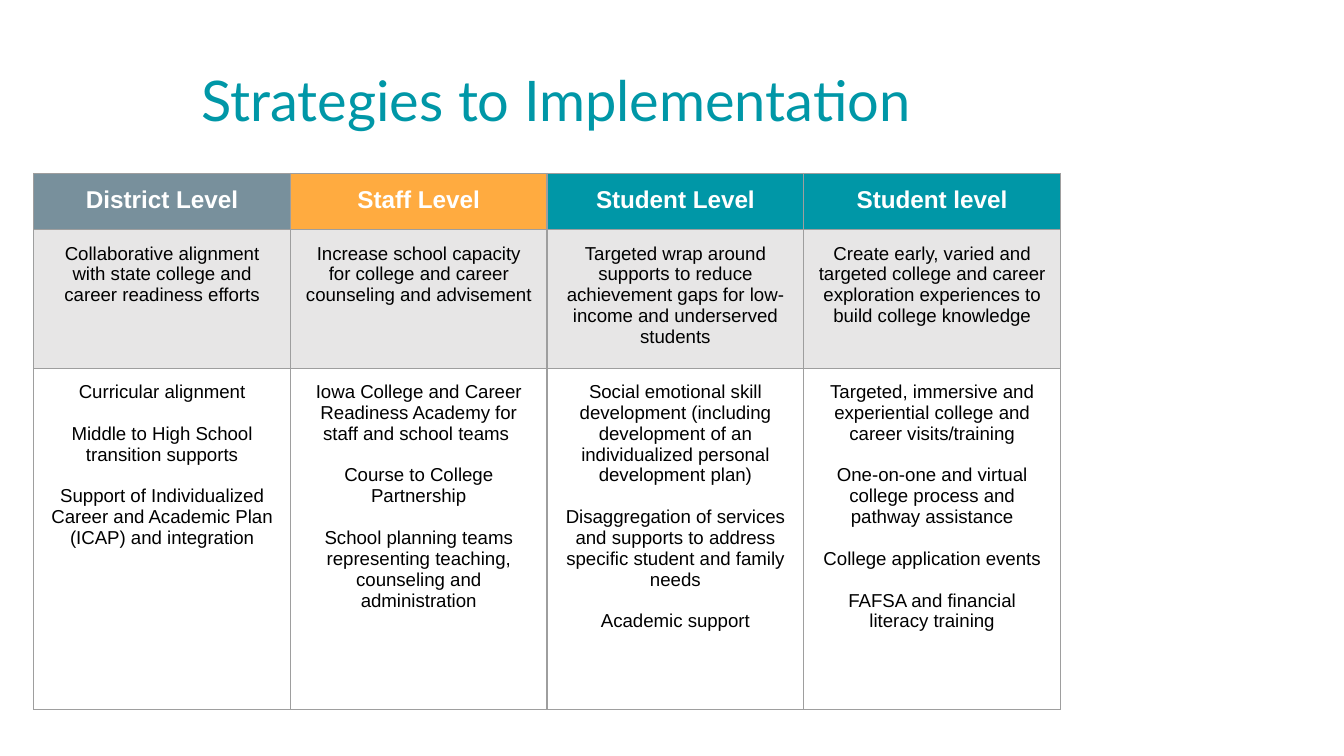
from dataclasses import dataclass
from typing import Any

from lxml import etree
from pptx import Presentation
from pptx import util as u
from pptx.dml import color as clr
from pptx.enum import text as t
from pptx.oxml import ns


@dataclass(frozen=True)
class Theme:
    teal: str = "0097A7"
    slate: str = "78909C"
    amber: str = "FFAB40"
    gray: str = "E7E6E6"
    white: str = "FFFFFF"
    black: str = "000000"
    rule: str = "9E9E9E"
    sans: str = "Arial"
    head: str = "Lato"
    title: float = 30
    label: float = 13
    body: float = 10
    gap: float = 11.2


@dataclass(frozen=True)
class Level:
    name: str
    fill: str
    goal: str
    steps: tuple[str, ...]


THEME = Theme()
WIDE = u.Inches(10)
ROWS = (0.42, 1.03, 2.54)
WIDTH = 1.91
LEVELS = (
    Level("District Level", THEME.slate,
          "Collaborative alignment with state college and career readiness efforts",
          ("Curricular alignment",
           "Middle to High School transition supports",
           "Support of Individualized Career and Academic Plan (ICAP) and integration")),
    Level("Staff Level", THEME.amber,
          "Increase school capacity for college and career counseling and advisement",
          ("Iowa College and Career Readiness Academy for staff and school teams ",
           "Course to College Partnership",
           "School planning teams representing teaching, counseling and administration")),
    Level("Student Level", THEME.teal,
          "Targeted wrap around supports to reduce achievement gaps for "
          "low-income and underserved students",
          ("Social emotional skill development (including development of an "
           "individualized personal development plan)",
           "Disaggregation of services and supports to address specific student "
           "and family needs",
           "Academic support")),
    Level("Student level", THEME.teal,
          "Create early, varied and targeted college and career exploration "
          "experiences to build college knowledge",
          ("Targeted, immersive and experiential college and career visits/training",
           "One-on-one and virtual college process and pathway assistance",
           "College application events",
           "FAFSA and financial literacy training")),
)


def apply(item: Any, form: dict[str, Any]) -> None:
    for key, value in form.items():
        setattr(item, key, value)


def write(para: Any, words: str, color: str, font: dict[str, Any]) -> None:
    run = para.add_run()
    run.text = words
    apply(run.font, font)
    run.font.color.rgb = clr.RGBColor.from_string(color)


def border(cell: Any) -> None:
    props = cell._tc.get_or_add_tcPr()
    for side in ("lnL", "lnR", "lnT", "lnB"):
        line = etree.SubElement(props, ns.qn(f"a:{side}"), w=str(u.Pt(0.75)))
        fill = etree.SubElement(line, ns.qn("a:solidFill"))
        etree.SubElement(fill, ns.qn("a:srgbClr"), val=THEME.rule)


def draw_cell(cell: Any, lines: tuple[str, ...], fill: str, color: str,
              font: dict[str, Any]) -> None:
    pad = u.Inches(0.1)
    apply(cell, {"margin_left": pad, "margin_right": pad,
                 "margin_top": pad, "margin_bottom": pad,
                 "vertical_anchor": t.MSO_ANCHOR.TOP})
    border(cell)
    cell.fill.solid()
    cell.fill.fore_color.rgb = clr.RGBColor.from_string(fill)
    frame = cell.text_frame
    for i, words in enumerate(lines):
        para = frame.add_paragraph() if i else frame.paragraphs[0]
        apply(para, {"alignment": t.PP_ALIGN.CENTER,
                     "space_before": u.Pt(THEME.gap if i else 0)})
        write(para, words, color, font)


def draw_table(slide: Any) -> None:
    table = slide.shapes.add_table(
        len(ROWS), len(LEVELS), u.Inches(0.25), u.Inches(1.29),
        u.Inches(WIDTH * len(LEVELS)), u.Inches(sum(ROWS))).table
    apply(table, {"first_row": False, "horz_banding": False})
    for row, high in zip(table.rows, ROWS):
        row.height = u.Inches(high)
    label = {"name": THEME.sans, "size": u.Pt(THEME.label), "bold": True}
    body = {"name": THEME.sans, "size": u.Pt(THEME.body), "bold": False}
    for col, level in enumerate(LEVELS):
        table.columns[col].width = u.Inches(WIDTH)
        draw_cell(table.cell(0, col), (level.name,), level.fill, THEME.white, label)
        draw_cell(table.cell(1, col), (level.goal,), THEME.gray, THEME.black, body)
        draw_cell(table.cell(2, col), level.steps, THEME.white, THEME.black, body)


def draw_title(slide: Any, words: str) -> None:
    box = slide.shapes.add_textbox(
        u.Inches(1.4), u.Inches(0.39), u.Inches(7.03), u.Inches(0.65))
    frame = box.text_frame
    apply(frame, {"word_wrap": True, "vertical_anchor": t.MSO_ANCHOR.BOTTOM})
    para = frame.paragraphs[0]
    para.line_spacing = 0.9
    write(para, words, THEME.teal,
          {"name": THEME.head, "size": u.Pt(THEME.title)})


def main() -> None:
    deck = Presentation()
    apply(deck, {"slide_width": WIDE, "slide_height": WIDE * 9 // 16})
    slide = deck.slides.add_slide(deck.slide_layouts[6])
    draw_table(slide)
    draw_title(slide, "Strategies to Implementation")
    deck.save("out.pptx")


if __name__ == "__main__":
    main()
